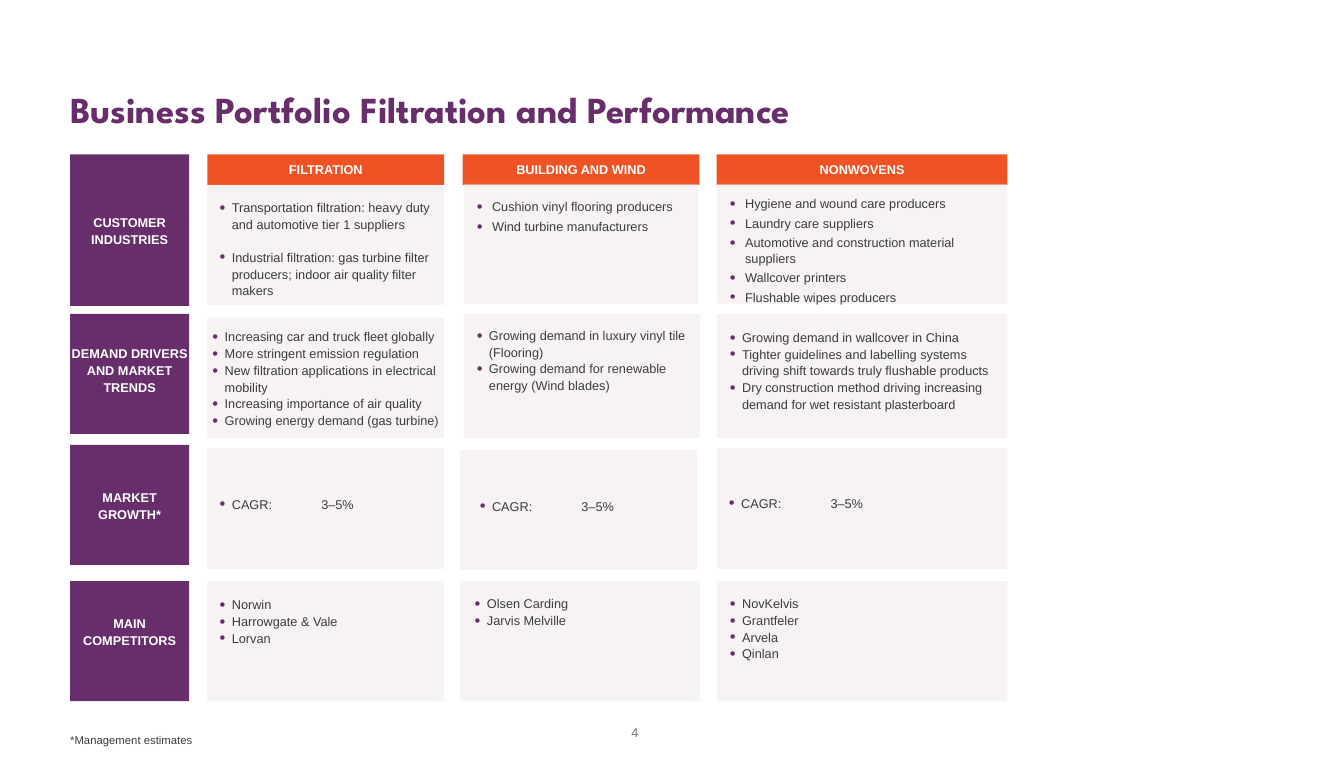
"""Build the business portfolio slide with its grid of market panels."""
from dataclasses import dataclass
from typing import Iterator

from lxml import etree
from pptx import Presentation
from pptx.dml.color import RGBColor
from pptx.enum.shapes import MSO_SHAPE
from pptx.enum.text import MSO_ANCHOR, MSO_AUTO_SIZE, PP_ALIGN
from pptx.oxml.ns import qn
from pptx.shapes.autoshape import Shape
from pptx.slide import Slide
from pptx.text.text import TextFrame
from pptx.util import Inches, Pt

RECTANGLE = MSO_SHAPE.RECTANGLE
TOP, MIDDLE, BOTTOM = MSO_ANCHOR.TOP, MSO_ANCHOR.MIDDLE, MSO_ANCHOR.BOTTOM
LEFT, CENTER, RIGHT = PP_ALIGN.LEFT, PP_ALIGN.CENTER, PP_ALIGN.RIGHT
NO_AUTOSIZE = MSO_AUTO_SIZE.NONE
COMPARISON_LAYOUT = 4

Box = tuple[float, float, float, float]


@dataclass(frozen=True)
class Theme:
    purple: str = "682E6C"
    orange: str = "F05323"
    panel: str = "EEE8E6"
    panel_alpha: int = 50
    ink: str = "3C3C3C"
    grey: str = "707173"
    white: str = "FFFFFF"
    title_font: str = "League Spartan"
    body_font: str = "Arial"
    title_size: float = 26
    body_size: float = 9
    note_size: float = 8
    bullet_percent: int = 130


@dataclass(frozen=True)
class Label:
    text: str
    box: Box
    fill: str
    line_spacing: float = 1.0
    lift: float = 0.0


@dataclass(frozen=True)
class Cell:
    panel: Box
    text_box: Box
    items: tuple[str, ...]
    hanging: float = 0.12
    line_spacing: float = 1.1
    space_before: float = 0.0
    inset: float = 0.12
    anchor: MSO_ANCHOR = TOP


THEME = Theme()
GROWTH = ("CAGR:\t3–5%",)
COLUMNS = (("FILTRATION", 2.04, 2.33), ("BUILDING AND WIND", 4.55, 2.33),
           ("NONWOVENS", 7.05, 2.86))
ROWS = (("CUSTOMER INDUSTRIES", 1.52, 1.49, 0.0),
        ("DEMAND DRIVERS AND MARKET TRENDS", 3.09, 1.18, 0.04),
        ("MARKET GROWTH*", 4.38, 1.18, 0.0),
        ("MAIN COMPETITORS", 5.72, 1.18, 0.1))
LABELS = (
    *(Label(text, (left, 1.52, width, 0.3), THEME.orange) for text, left, width in COLUMNS),
    *(Label(text, (0.69, top, 1.17, height), THEME.purple, 1.1, lift)
      for text, top, height, lift in ROWS),
)
FILTRATION = (
    Cell((2.04, 1.82, 2.33, 1.18), (2.04, 1.83, 2.36, 1.4),
         ("Transportation filtration: heavy duty and automotive tier 1 suppliers",
          "Industrial filtration: gas turbine filter producers; indoor air quality filter makers"),
         space_before=11.5),
    Cell((2.04, 3.13, 2.33, 1.18), (2.04, 3.13, 2.33, 1.18),
         ("Increasing car and truck fleet globally", "More stringent emission regulation",
          "New filtration applications in electrical mobility",
          "Increasing importance of air quality", "Growing energy demand (gas turbine)"),
         inset=0.05, anchor=MIDDLE),
    Cell((2.04, 4.41, 2.33, 1.19), (2.04, 4.75, 2.33, 0.39), GROWTH),
    Cell((2.04, 5.72, 2.33, 1.18), (2.04, 5.74, 2.36, 0.74),
         ("Norwin", "Harrowgate & Vale", "Lorvan")),
)
BUILDING = (
    Cell((4.56, 1.81, 2.31, 1.18), (4.57, 1.84, 2.33, 0.58),
         ("Cushion vinyl flooring producers", "Wind turbine manufacturers"),
         hanging=0.15, line_spacing=1.0, space_before=3),
    Cell((4.56, 3.09, 2.33, 1.22), (4.57, 3.09, 2.36, 1.07),
         ("Growing demand in luxury vinyl tile (Flooring)",
          "Growing demand for renewable energy (Wind blades)")),
    Cell((4.53, 4.43, 2.33, 1.18), (4.6, 4.77, 2.33, 0.39), GROWTH),
    Cell((4.53, 5.72, 2.36, 1.18), (4.55, 5.73, 2.33, 0.57),
         ("Olsen Carding", "Jarvis Melville")),
)
NONWOVENS = (
    Cell((7.05, 1.81, 2.86, 1.18), (7.06, 1.81, 2.86, 1.32),
         ("Hygiene and wound care producers", "Laundry care suppliers",
          "Automotive and construction material suppliers", "Wallcover printers",
          "Flushable wipes producers"),
         hanging=0.15, line_spacing=1.0, space_before=3),
    Cell((7.05, 3.09, 2.86, 1.22), (7.06, 3.11, 2.86, 1.4),
         ("Growing demand in wallcover in China",
          "Tighter guidelines and labelling systems driving shift towards truly flushable products",
          "Dry construction method driving increasing demand for wet resistant plasterboard")),
    Cell((7.05, 4.41, 2.86, 1.19), (7.05, 4.74, 2.33, 0.39), GROWTH),
    Cell((7.05, 5.72, 2.86, 1.18), (7.06, 5.73, 2.36, 0.9),
         ("NovKelvis", "Grantfeler", "Arvela", "Qinlan")),
)


def place(shape: Shape, box: Box) -> None:
    shape.left, shape.top, shape.width, shape.height = map(Inches, box)


def prepare_frame(frame: TextFrame, anchor: MSO_ANCHOR, inset: float = 0) -> None:
    frame.word_wrap = True
    frame.auto_size = NO_AUTOSIZE
    frame.vertical_anchor = anchor
    frame.margin_left = frame.margin_right = Inches(inset)
    frame.margin_top = frame.margin_bottom = Inches(inset)


def format_text(frame: TextFrame, size: float, color: str, bold: bool = False,
                align: PP_ALIGN = LEFT, font: str = THEME.body_font) -> None:
    for paragraph in frame.paragraphs:
        paragraph.alignment = align
        for run in paragraph.runs:
            run.font.name = font
            run.font.size = Pt(size)
            run.font.bold = bold
            run.font.color.rgb = RGBColor.from_string(color)


def add_block(slide: Slide, box: Box, color: str) -> Shape:
    block = slide.shapes.add_shape(RECTANGLE, *map(Inches, box))
    block.shadow.inherit = False
    block.fill.solid()
    block.fill.fore_color.rgb = RGBColor.from_string(color)
    block.line.fill.background()
    return block


def add_label(slide: Slide, label: Label) -> None:
    frame = add_block(slide, label.box, label.fill).text_frame
    prepare_frame(frame, MIDDLE)
    frame.margin_bottom = Inches(2 * label.lift)
    frame.text = label.text
    frame.paragraphs[0].line_spacing = label.line_spacing
    format_text(frame, THEME.body_size, THEME.white, True, CENTER)


def add_panel(slide: Slide, box: Box) -> None:
    panel = add_block(slide, box, THEME.panel)
    color = panel._element.spPr.find(f"{qn('a:solidFill')}/{qn('a:srgbClr')}")
    etree.SubElement(color, qn("a:alpha"), val=str(THEME.panel_alpha * 1000))


def fill_list(shape: Shape, cell: Cell) -> None:
    place(shape, cell.text_box)
    frame = shape.text_frame
    prepare_frame(frame, cell.anchor, cell.inset)
    frame.text = "\n".join(cell.items)
    for index, paragraph in enumerate(frame.paragraphs):
        properties = paragraph._p.get_or_add_pPr()
        properties.set("marL", str(Inches(cell.hanging)))
        properties.set("indent", str(-Inches(cell.hanging)))
        properties.set("defTabSz", str(Inches(1)))
        color = etree.SubElement(properties, qn("a:buClr"))
        etree.SubElement(color, qn("a:srgbClr"), val=THEME.purple)
        etree.SubElement(properties, qn("a:buSzPct"), val=str(THEME.bullet_percent * 1000))
        etree.SubElement(properties, qn("a:buFont"), typeface=THEME.body_font)
        etree.SubElement(properties, qn("a:buChar"), char="•")
        paragraph.line_spacing = cell.line_spacing
        paragraph.space_before = Pt(cell.space_before if index else 0)
        paragraph.space_after = Pt(0)
    format_text(frame, THEME.body_size, THEME.ink)


def add_cell(slide: Slide, cell: Cell, placeholders: Iterator[Shape]) -> None:
    add_panel(slide, cell.panel)
    shape = next(placeholders, None)
    if shape is None:
        shape = slide.shapes.add_textbox(*map(Inches, cell.text_box))
    slide.shapes._spTree.append(shape._element)
    fill_list(shape, cell)


def add_note(slide: Slide, text: str, box: Box, size: float, color: str,
             align: PP_ALIGN, anchor: MSO_ANCHOR) -> None:
    frame = slide.shapes.add_textbox(*map(Inches, box)).text_frame
    prepare_frame(frame, anchor)
    frame.text = text
    format_text(frame, size, color, align=align)


def main() -> None:
    presentation = Presentation()
    presentation.slide_width, presentation.slide_height = Inches(13.22), Inches(7.5)
    slide = presentation.slides.add_slide(presentation.slide_layouts[COMPARISON_LAYOUT])
    title = slide.shapes.title
    place(title, (0.69, 0.35, 10.71, 0.94))
    prepare_frame(title.text_frame, BOTTOM)
    title.text_frame.text = "Business Portfolio Filtration and Performance"
    format_text(title.text_frame, THEME.title_size, THEME.purple, True, font=THEME.title_font)
    for label in LABELS:
        add_label(slide, label)
    placeholders = iter(list(slide.placeholders)[1:])
    for cell in (*FILTRATION, *BUILDING, *NONWOVENS):
        add_cell(slide, cell, placeholders)
    add_note(slide, "*Management estimates", (0.69, 7.22, 4.59, 0.19),
             THEME.note_size, THEME.ink, LEFT, TOP)
    add_note(slide, "4", (5.89, 7.13, 0.39, 0.16), THEME.body_size, THEME.grey, RIGHT, MIDDLE)
    presentation.save("out.pptx")


if __name__ == "__main__":
    main()
